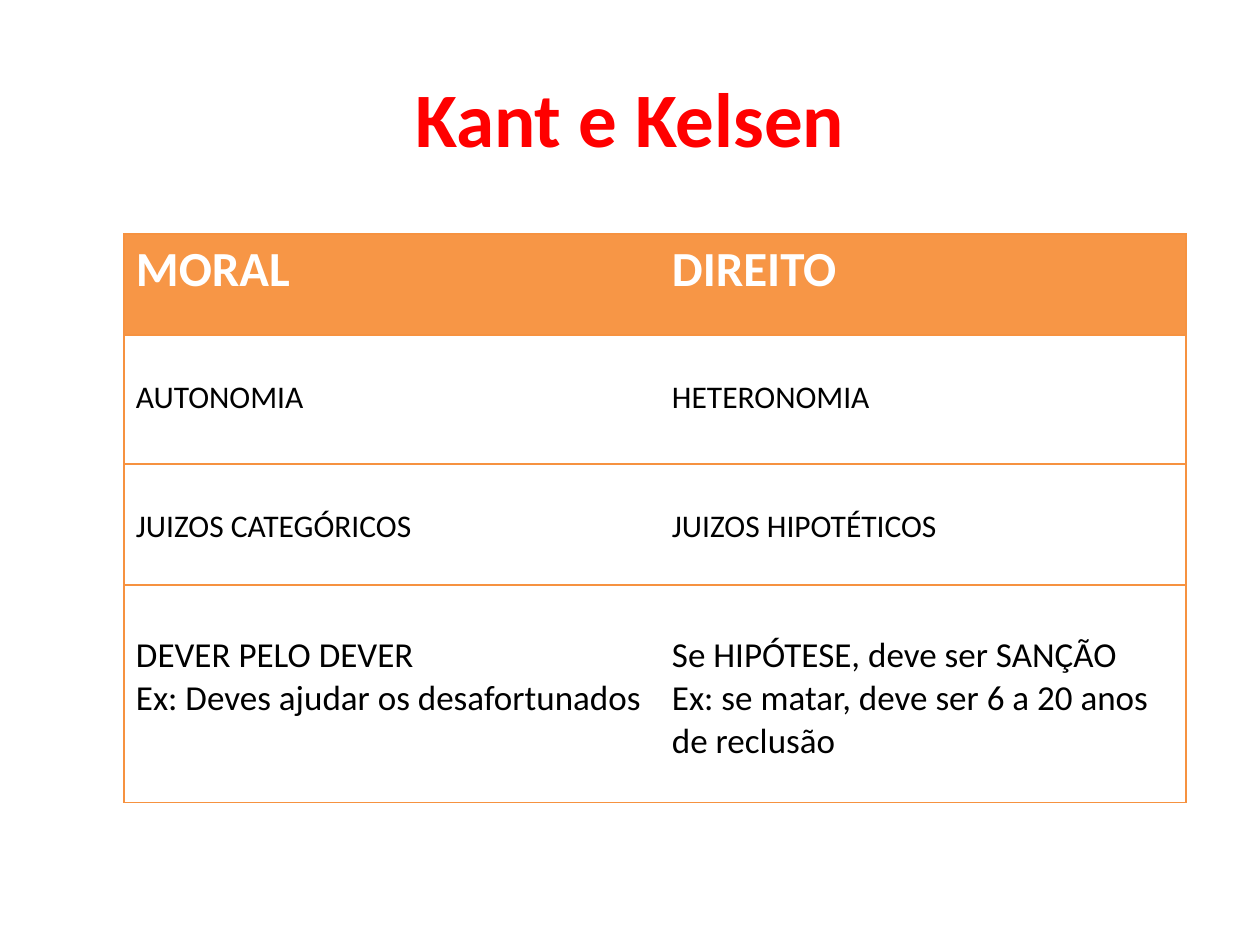
from dataclasses import dataclass

from lxml import etree
from pptx import Presentation
from pptx import util as u
from pptx.dml.color import RGBColor
from pptx.enum import text
from pptx.oxml.ns import qn

COLORS = {
    "title": "FF0000",
    "header": "F79646",
    "border": "F69240",
    "header_text": "FFFFFF",
    "body_text": "000000",
}
FONT = "Calibri"
EMU_PER_PX = 914400 / 126
COLUMN_WIDTHS = (536, 526)
MARGIN_X, MARGIN_Y = 12, 6


@dataclass
class Row:
    height: int
    size: int
    cells: tuple[tuple[str, ...], tuple[str, ...]]
    top_gap: int = 0
    header: bool = False


ROWS = (
    Row(101, 28, (("MORAL",), ("DIREITO",)), header=True),
    Row(129, 18, (("AUTONOMIA",), ("HETERONOMIA",)), top_gap=38),
    Row(121, 18, (("JUIZOS CATEGÓRICOS",), ("JUIZOS HIPOTÉTICOS",)), top_gap=38),
    Row(218, 20, (
        ("DEVER PELO DEVER", "Ex: Deves ajudar os desafortunados"),
        ("Se HIPÓTESE, deve ser SANÇÃO",
         "Ex: se matar, deve ser 6 a 20 anos de reclusão"),
    ), top_gap=43),
)


def px(n: int) -> int:
    return round(n * EMU_PER_PX)


def rgb(name: str) -> RGBColor:
    return RGBColor.from_string(COLORS[name])


def add_run(p, words: str, size: int, color: str, bold: bool) -> None:
    r = p.add_run()
    r.text = words
    r.font.name = FONT
    r.font.size = u.Pt(size)
    r.font.bold = bold
    r.font.color.rgb = rgb(color)


def set_borders(cell, column: int) -> None:
    """Rule the outer edges and between rows, leaving the columns undivided."""
    inner = "R" if column == 0 else "L"
    tc_pr = cell._tc.get_or_add_tcPr()
    for side in "LRTB":
        ln = etree.SubElement(tc_pr, qn(f"a:ln{side}"), w=str(u.Pt(0.75)))
        if side == inner:
            etree.SubElement(ln, qn("a:noFill"))
        else:
            fill = etree.SubElement(ln, qn("a:solidFill"))
            etree.SubElement(fill, qn("a:srgbClr"), val=COLORS["border"])


def fill_cell(cell, row: Row, column: int) -> None:
    set_borders(cell, column)
    if row.header:
        cell.fill.solid()
        cell.fill.fore_color.rgb = rgb("header")
    else:
        cell.fill.background()
    cell.margin_left = cell.margin_right = px(MARGIN_X)
    cell.margin_top = px(MARGIN_Y + row.top_gap)
    cell.margin_bottom = px(MARGIN_Y)
    cell.vertical_anchor = text.MSO_ANCHOR.TOP
    tf = cell.text_frame
    color = "header_text" if row.header else "body_text"
    for i, words in enumerate(row.cells[column]):
        p = tf.add_paragraph() if i else tf.paragraphs[0]
        add_run(p, words, row.size, color, row.header)


def add_title(slide, words: str) -> None:
    sp = slide.shapes.title
    sp.left, sp.top, sp.width, sp.height = px(63), px(38), px(1134), px(158)
    tf = sp.text_frame
    tf.vertical_anchor = text.MSO_ANCHOR.MIDDLE
    p = tf.paragraphs[0]
    p.alignment = text.PP_ALIGN.CENTER
    add_run(p, words, 44, "title", True)


def add_comparison(slide) -> None:
    table = slide.shapes.add_table(
        len(ROWS), len(COLUMN_WIDTHS), px(124), px(234),
        px(sum(COLUMN_WIDTHS)), px(sum(row.height for row in ROWS))).table
    table.horz_banding = False
    for column, width in zip(table.columns, COLUMN_WIDTHS):
        column.width = px(width)
    for i, row in enumerate(ROWS):
        table.rows[i].height = px(row.height)
        for j in range(len(COLUMN_WIDTHS)):
            fill_cell(table.cell(i, j), row, j)


def main() -> None:
    prs = Presentation()
    prs.slide_width, prs.slide_height = px(1260), px(945)
    slide = prs.slides.add_slide(prs.slide_layouts[5])
    add_title(slide, "Kant e Kelsen")
    add_comparison(slide)
    prs.save("out.pptx")


if __name__ == "__main__":
    main()
